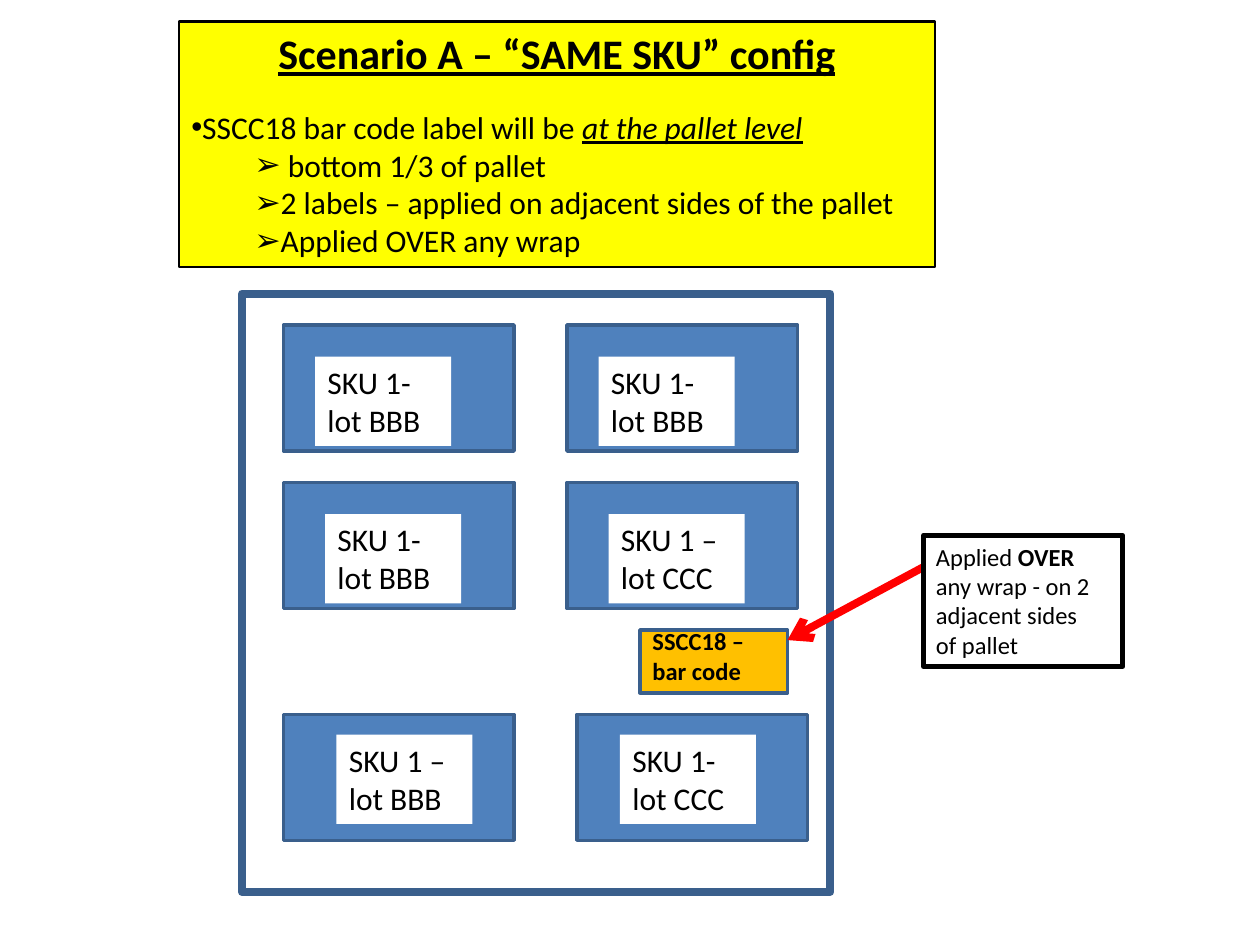
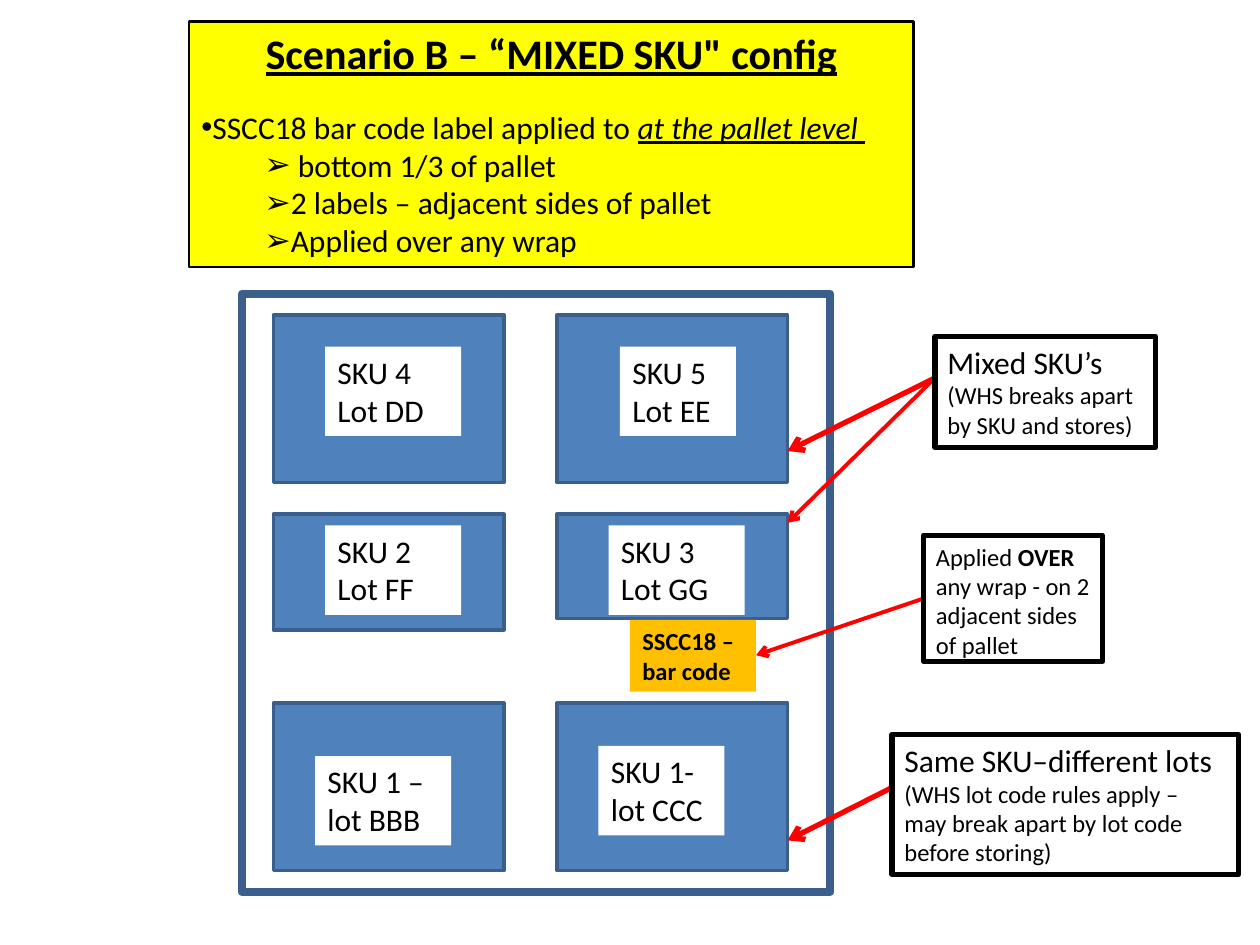
from dataclasses import dataclass
from typing import NamedTuple, Optional

from lxml import etree
from pptx import Presentation
from pptx import util as u
from pptx.dml.color import RGBColor
from pptx.enum import shapes, text
from pptx.oxml import ns

COLOURS = {
    "black": "000000",
    "white": "FFFFFF",
    "banner": "FFFF00",
    "carton": "4F81BD",
    "edge": "3A5F8C",
    "tag": "FFC000",
    "arrow": "FF0000",
}
FONT = "Calibri"
CARTON_WIDTH = 1.83
LABEL_HEIGHT = 0.71


class Box(NamedTuple):
    left: float
    top: float
    width: float
    height: float


class Run(NamedTuple):
    words: str
    size: float = 18
    style: str = ""  # any of b, i, u


class Bullet(NamedTuple):
    mark: str
    level: int


@dataclass
class Para:
    runs: list[Run]
    bullet: Optional[Bullet] = None
    centred: bool = False
    space_before: float = 0


@dataclass
class Carton:
    left: float
    top: float
    height: float
    label_left: float
    label_top: float
    label_width: float
    lines: list[str]


@dataclass
class Callout:
    frame: Box
    paras: list[Para]
    text_width: Optional[float] = None  # set when the text is wider than its frame


@dataclass
class Arrow:
    start: tuple[float, float]
    end: tuple[float, float]
    weight: float


@dataclass
class Tag:
    text_box: Box
    lines: list[str]
    plate: Optional[Box] = None  # outlined plate behind the text


@dataclass
class Scenario:
    banner: Box
    title: str
    intro: str
    emphasis: str
    points: list[str]
    cartons: list[Carton]
    tag: Tag
    callouts: list[Callout]
    arrows: list[Arrow]


# ---- drawing ----
def rgb(name: str) -> RGBColor:
    return RGBColor.from_string(COLOURS[name])


def add_bullet(paragraph, bullet: Bullet) -> None:
    paragraph.level = bullet.level
    props = paragraph._p.get_or_add_pPr()
    props.set("marL", str(u.Inches(0.5 * bullet.level)))
    props.set("indent", "0")
    etree.SubElement(props, ns.qn("a:buFont")).set("typeface", "Arial")
    etree.SubElement(props, ns.qn("a:buChar")).set("char", bullet.mark)


def write(shape, paras: list[Para]) -> None:
    frame = shape.text_frame
    frame.word_wrap = True
    frame.vertical_anchor = text.MSO_ANCHOR.TOP
    for index, para in enumerate(paras):
        paragraph = frame.add_paragraph() if index else frame.paragraphs[0]
        paragraph.alignment = text.PP_ALIGN.CENTER if para.centred else text.PP_ALIGN.LEFT
        if para.space_before:
            paragraph.space_before = u.Pt(para.space_before)
        if para.bullet:
            add_bullet(paragraph, para.bullet)
        for part in para.runs:
            run = paragraph.add_run()
            run.text = part.words
            run.font.name = FONT
            run.font.size = u.Pt(part.size)
            run.font.color.rgb = rgb("black")
            run.font.bold = "b" in part.style
            run.font.italic = "i" in part.style
            run.font.underline = "u" in part.style


def add_box(slide, box: Box, fill: str = "", line: str = "", weight: float = 0,
            paras: Optional[list[Para]] = None) -> None:
    shape = slide.shapes.add_shape(shapes.MSO_SHAPE.RECTANGLE, *map(u.Inches, box))
    shape.shadow.inherit = False
    if fill:
        shape.fill.solid()
        shape.fill.fore_color.rgb = rgb(fill)
    else:
        shape.fill.background()
    if line:
        shape.line.color.rgb = rgb(line)
        shape.line.width = u.Pt(weight)
    else:
        shape.line.fill.background()
    if paras:
        write(shape, paras)


def add_text(slide, box: Box, paras: list[Para]) -> None:
    write(slide.shapes.add_textbox(*map(u.Inches, box)), paras)


def add_arrow(slide, arrow: Arrow) -> None:
    connector = slide.shapes.add_connector(
        shapes.MSO_CONNECTOR.STRAIGHT, *map(u.Inches, arrow.start + arrow.end))
    connector.line.color.rgb = rgb("arrow")
    connector.line.width = u.Pt(arrow.weight)
    etree.SubElement(connector.line._get_or_add_ln(), ns.qn("a:tailEnd")).set("type", "arrow")
    etree.SubElement(connector._element.spPr, ns.qn("a:effectLst"))


def plain(lines: list[str], size: float = 18, style: str = "") -> list[Para]:
    return [Para([Run(line, size, style)]) for line in lines]


def add_banner(slide, scenario: Scenario) -> None:
    intro = Para([Run(scenario.intro), Run(scenario.emphasis, style="iu")],
                 Bullet("•", 0), space_before=17)
    points = [Para([Run(point)], Bullet("➢", 1)) for point in scenario.points]
    title = Para([Run(scenario.title, 24, "bu")], centred=True)
    add_box(slide, scenario.banner, "banner", "black", 1.5, [title, intro, *points])


def add_tag(slide, tag: Tag) -> None:
    paras = plain(tag.lines, 14, "b")
    if tag.plate:
        add_box(slide, tag.plate, "tag", "edge", 2)
        add_text(slide, tag.text_box, paras)
    else:
        add_box(slide, tag.text_box, "tag", paras=paras)


def add_callout(slide, callout: Callout) -> None:
    if callout.text_width:
        add_text(slide, callout.frame._replace(width=callout.text_width), callout.paras)
        add_box(slide, callout.frame, line="black", weight=3)
    else:
        add_box(slide, callout.frame, line="black", weight=3, paras=callout.paras)


def add_scenario(deck, scenario: Scenario) -> None:
    slide = deck.slides.add_slide(deck.slide_layouts[6])
    add_banner(slide, scenario)
    add_box(slide, Box(1.92, 2.33, 4.67, 4.75), line="edge", weight=4.5)  # pallet
    for carton in scenario.cartons:
        add_box(slide, Box(carton.left, carton.top, CARTON_WIDTH, carton.height),
                "carton", "edge", 2)
        add_box(slide, Box(carton.label_left, carton.label_top, carton.label_width, LABEL_HEIGHT),
                "white", paras=plain(carton.lines))
    add_tag(slide, scenario.tag)
    for arrow in scenario.arrows:
        add_arrow(slide, arrow)
    for callout in scenario.callouts:
        add_callout(slide, callout)


# ---- content ----
OVER_WRAP = [
    Para([Run("Applied ", 14), Run("OVER", 14, "b")]),
    *plain(["any wrap - on 2 adjacent sides", "of pallet"], 14),
]


def explained(heading: str, detail: str) -> list[Para]:
    return plain([heading]) + plain([detail], 14)


SAME_SKU = Scenario(
    banner=Box(1.42, 0.17, 6, 1.95),
    title="Scenario A – “SAME SKU” config",
    intro="SSCC18 bar code label will be ",
    emphasis="at the pallet level",
    points=[" bottom 1/3 of pallet",
            "2 labels – applied on adjacent sides of the pallet",
            "Applied OVER any wrap"],
    cartons=[
        Carton(2.25, 2.58, 1, 2.5, 2.83, 1.08, ["SKU 1- lot BBB"]),
        Carton(4.5, 2.58, 1, 4.75, 2.83, 1.08, ["SKU 1- lot BBB"]),
        Carton(2.25, 3.83, 1, 2.58, 4.08, 1.08, ["SKU 1- lot BBB"]),
        Carton(4.5, 3.83, 1, 4.83, 4.08, 1.08, ["SKU 1 – lot CCC"]),
        Carton(2.25, 5.67, 1, 2.67, 5.83, 1.08, ["SKU 1 – lot BBB"]),
        Carton(4.58, 5.67, 1, 4.92, 5.83, 1.08, ["SKU 1- lot CCC"]),
    ],
    tag=Tag(Box(5.08, 4.92, 1.25, 0.57), ["SSCC18 –", "bar code"], Box(5.08, 5, 1.17, 0.5)),
    callouts=[Callout(Box(7.33, 4.25, 1.58, 1.04), OVER_WRAP)],
    arrows=[Arrow((7.33, 4.5), (6.25, 5.08), 4.5)],
)

MIXED_SKU = Scenario(
    banner=Box(1.5, 0.17, 5.75, 1.95),
    title="Scenario B – “MIXED SKU\" config",
    intro="SSCC18 bar code label applied to ",
    emphasis="at the pallet level ",
    points=[" bottom 1/3 of pallet",
            "2 labels – adjacent sides of pallet",
            "Applied over any wrap"],
    cartons=[
        Carton(2.17, 2.5, 1.33, 2.58, 2.75, 1.08, ["SKU 4", "Lot DD"]),
        Carton(4.42, 2.5, 1.33, 4.92, 2.75, 0.92, ["SKU 5", "Lot EE"]),
        Carton(2.17, 4.08, 0.92, 2.58, 4.17, 1.08, ["SKU 2", "Lot FF"]),
        Carton(4.42, 4.08, 0.83, 4.83, 4.17, 1.08, ["SKU 3", "Lot GG"]),
        Carton(2.17, 5.58, 1.33, 2.5, 6, 1.08, ["SKU 1 – lot BBB"]),
        Carton(4.42, 5.58, 1.33, 4.75, 5.92, 1, ["SKU 1- lot CCC"]),
    ],
    tag=Tag(Box(5, 4.92, 1, 0.57), ["SSCC18 –bar code"]),
    callouts=[
        Callout(Box(7.42, 2.67, 1.75, 0.88),
                explained("Mixed SKU’s", "(WHS breaks apart by SKU and stores)")),
        Callout(Box(7.08, 5.83, 2.75, 1.11),
                explained("Same SKU–different lots",
                          "(WHS lot code rules apply – may break apart by lot code before storing)")),
        Callout(Box(7.33, 4.25, 1.42, 1), OVER_WRAP, text_width=1.5),
    ],
    arrows=[
        Arrow((7.08, 6.25), (6.25, 6.67), 3),
        Arrow((7.42, 3), (6.25, 3.58), 3),
        Arrow((7.42, 3), (6.25, 4.15), 2.25),
        Arrow((7.33, 4.75), (6, 5.2), 2.25),
    ],
)


def main() -> None:
    deck = Presentation()
    deck.slide_width, deck.slide_height = u.Inches(10), u.Inches(7.5)
    for scenario in (SAME_SKU, MIXED_SKU):
        add_scenario(deck, scenario)
    deck.save("out.pptx")


if __name__ == "__main__":
    main()
